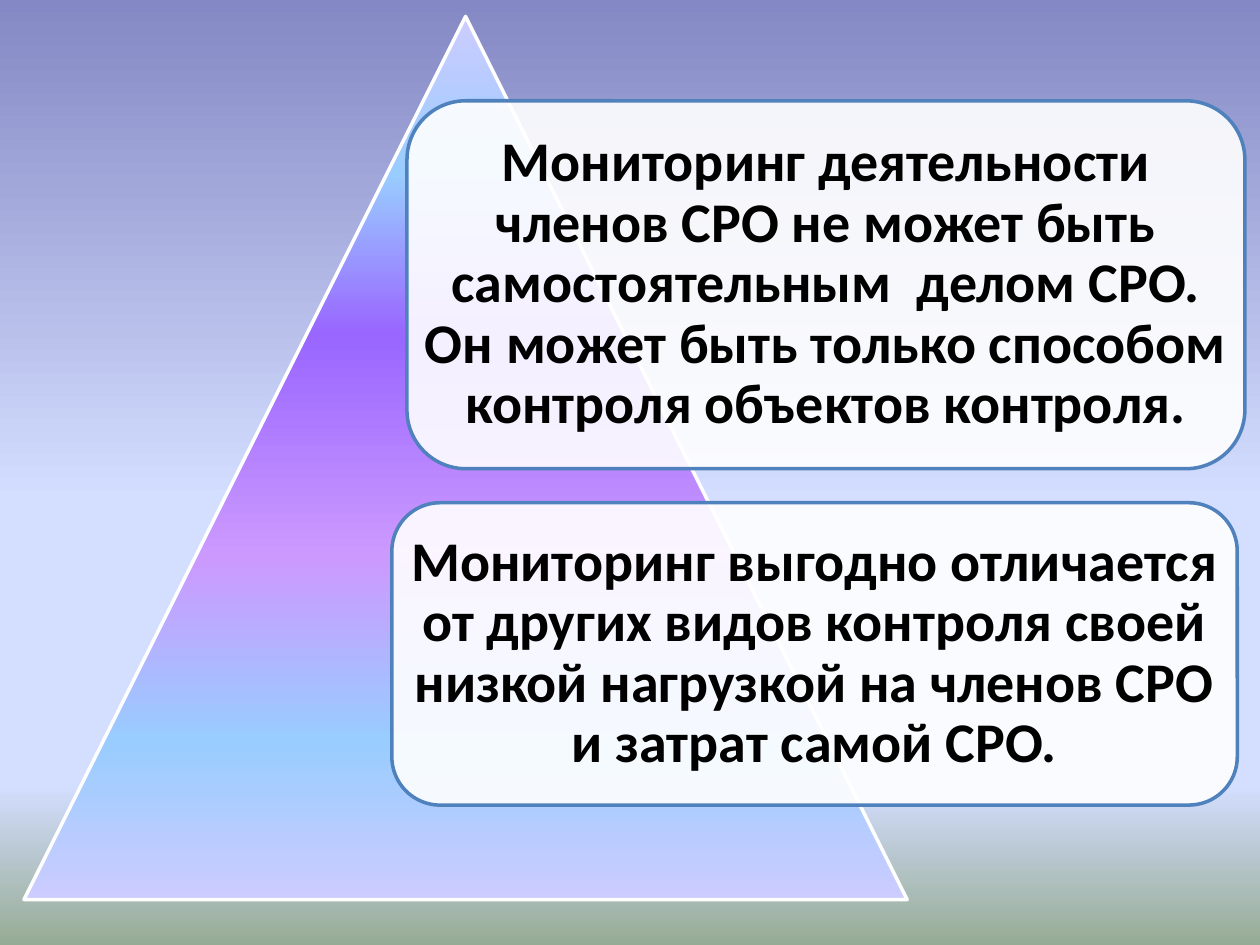
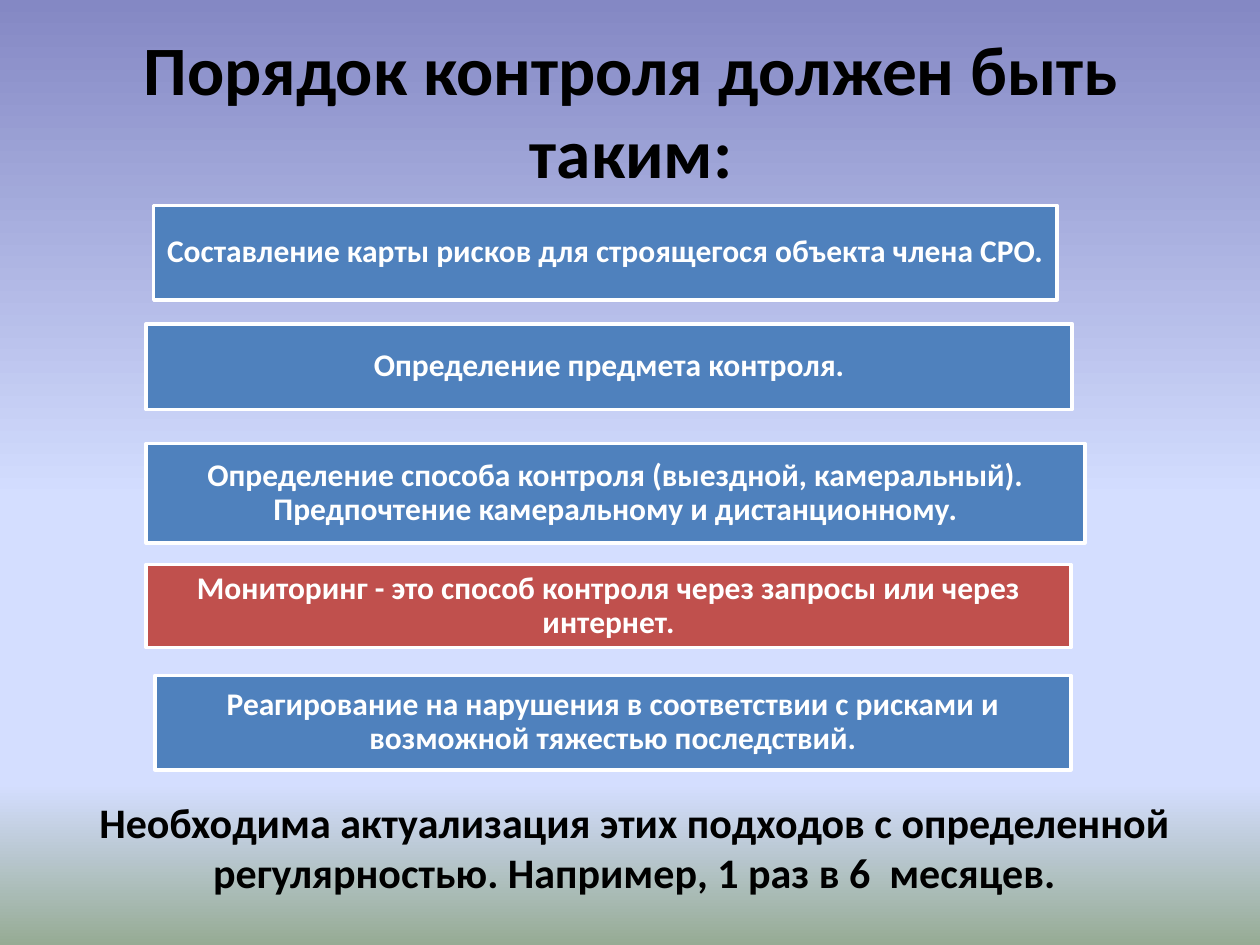
from lxml.etree import SubElement
from pptx import Presentation
from pptx.dml.color import RGBColor
from pptx.enum.shapes import MSO_SHAPE
from pptx.enum.text import MSO_ANCHOR, PP_ALIGN
from pptx.oxml.ns import qn
from pptx.util import Inches, Pt

FONT = "Calibri"
BLACK, WHITE, BLUE, RED = "000000", "FFFFFF", "4F81BD", "C0504D"
SKY = [(0, "8488C4"), (53, "D4DEFF"), (83, "D4DEFF"), (100, "96AB94")]
PYRAMID = [(0, "CCCCFF"), (18, "99CCFF"), (36, "9966FF"),
           (61, "CC99FF"), (82, "99CCFF"), (100, "CCCCFF")]
COLUMNS, ROWS = 100, 75
CELL = Inches(0.1)

THESES = [
    ((32.3, 8, 66.5, 29.2),
     "Мониторинг деятельности членов СРО не может быть самостоятельным  делом СРО. "
     "Он может быть только способом контроля объектов контроля."),
    ((31.1, 39.9, 67.1, 24),
     "Мониторинг выгодно отличается от других видов контроля своей низкой нагрузкой "
     "на членов СРО и затрат самой СРО."),
]
STEPS = [
    ((12.2, 16.3, 71.7, 7.5), BLUE,
     "Составление карты рисков для строящегося объекта члена СРО."),
    ((11.6, 25.7, 73.5, 6.8), BLUE, "Определение предмета контроля."),
    ((11.6, 35.2, 74.5, 7.9), BLUE,
     "Определение способа контроля (выездной, камеральный). "
     "Предпочтение камеральному и дистанционному."),
    ((11.6, 44.8, 73.4, 6.6), RED,
     "Мониторинг - это способ контроля через запросы или через интернет."),
    ((12.3, 53.6, 72.7, 7.5), BLUE,
     "Реагирование на нарушения в соответствии с рисками и возможной тяжестью последствий."),
]


def color(value):
    """Turn a hex string into a colour."""
    return RGBColor.from_string(value)


def grid(frame):
    """Turn column, row, width and height in grid cells into lengths."""
    return [round(cells * CELL) for cells in frame]


def fill_gradient(fill, element, stops):
    """Fill from top to bottom with the given percent and colour stops."""
    fill.gradient()
    fill.gradient_angle = 270
    stop_list = next(element.iter(qn("a:gsLst")))
    for stop in list(stop_list):
        stop_list.remove(stop)
    for percent, value in stops:
        stop = SubElement(stop_list, qn("a:gs"), pos=str(percent * 1000))
        SubElement(stop, qn("a:srgbClr"), val=value)


def write(text_frame, text, size, value, spacing=None, anchor=MSO_ANCHOR.MIDDLE):
    """Write one centred bold paragraph."""
    text_frame.word_wrap = True
    text_frame.vertical_anchor = anchor
    text_frame.text = text
    paragraph = text_frame.paragraphs[0]
    paragraph.alignment = PP_ALIGN.CENTER
    paragraph.line_spacing = spacing
    font = paragraph.font
    font.name, font.size, font.bold = FONT, Pt(size), True
    font.color.rgb = color(value)


def add_outlined(slide, preset, frame, line):
    """Add a preset shape with a two point outline and no shadow."""
    shape = slide.shapes.add_shape(preset, *grid(frame))
    shape.shadow.inherit = False
    shape.line.color.rgb = color(line)
    shape.line.width = Pt(2)
    return shape


def set_margins(text_frame, margin):
    """Give all four sides the same inset."""
    text_frame.margin_left = text_frame.margin_right = margin
    text_frame.margin_top = text_frame.margin_bottom = margin


def add_card(slide, preset, frame, text, size, fill, line, text_color, margin):
    """Add a filled and outlined shape with a centred text."""
    card = add_outlined(slide, preset, frame, line)
    card.fill.solid()
    card.fill.fore_color.rgb = color(fill)
    set_margins(card.text_frame, Inches(margin))
    write(card.text_frame, text, size, text_color, spacing=0.9)
    return card


def add_thesis(slide, frame, text):
    """Add a translucent rounded card with a key statement."""
    card = add_card(slide, MSO_SHAPE.ROUNDED_RECTANGLE, frame, text, 32,
                    WHITE, BLUE, BLACK, 0)
    card.adjustments[0] = 0.16
    fill_color = next(card.element.spPr.iter(qn("a:srgbClr")))
    SubElement(fill_color, qn("a:alpha"), val="90000")


def build_theses(presentation):
    """Build the pyramid slide with the two statements on monitoring."""
    slide = presentation.slides.add_slide(presentation.slide_layouts[6])
    pyramid = add_outlined(slide, MSO_SHAPE.ISOSCELES_TRIANGLE,
                           (1.9, 1.3, 70.1, 70.1), WHITE)
    fill_gradient(pyramid.fill, pyramid.element, PYRAMID)
    for frame, text in THESES:
        add_thesis(slide, frame, text)


def build_steps(presentation):
    """Build the slide with the order of control."""
    slide = presentation.slides.add_slide(presentation.slide_layouts[5])
    title = slide.shapes.title
    title.left, title.top, title.width, title.height = grid((5.1, 2.4, 90, 12.5))
    write(title.text_frame, "Порядок контроля должен быть таким:", 39.6, BLACK)
    for frame, fill, text in STEPS:
        add_card(slide, MSO_SHAPE.RECTANGLE, frame, text, 18, fill, WHITE, WHITE, 0.07)
    note = slide.shapes.add_textbox(*grid((4.3, 62.7, 92.1, 9.1)))
    write(note.text_frame,
          "Необходима актуализация этих подходов с определенной регулярностью. "
          "Например, 1 раз в 6  месяцев.", 24, BLACK, anchor=MSO_ANCHOR.TOP)


def main():
    """Build and save the presentation."""
    presentation = Presentation()
    presentation.slide_width = COLUMNS * CELL
    presentation.slide_height = ROWS * CELL
    master = presentation.slide_master
    fill_gradient(master.background.fill, master.element, SKY)
    build_theses(presentation)
    build_steps(presentation)
    presentation.save("out.pptx")


if __name__ == "__main__":
    main()
